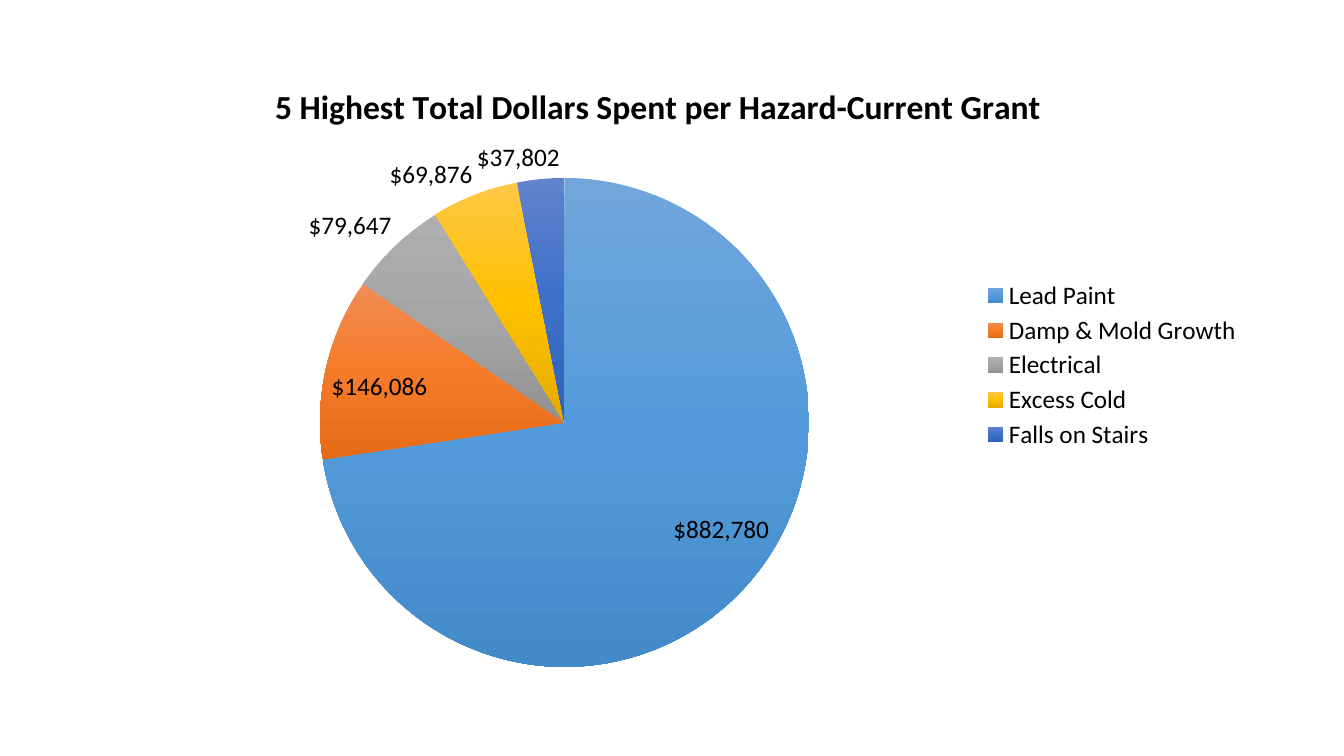
from copy import deepcopy
from dataclasses import dataclass

from lxml.etree import SubElement
from pptx import Presentation
from pptx.chart.data import CategoryChartData
from pptx.dml.color import RGBColor
from pptx.enum.chart import XL_CHART_TYPE as ChartType
from pptx.enum.chart import XL_LABEL_POSITION as LabelPosition
from pptx.enum.chart import XL_LEGEND_POSITION as LegendPosition
from pptx.oxml.ns import qn
from pptx.util import Emu, Pt

TITLE = "5 Highest Total Dollars Spent per Hazard-Current Grant"
# hazard, dollars, gradient from top to bottom
HAZARDS = [
    ("Lead Paint", 882780, ("71A6DB", "549BDB", "438AC9")),
    ("Damp & Mold Growth", 146086, ("F18C55", "F67B28", "E56B17")),
    ("Electrical", 79647, ("AFAFAF", "A5A5A5", "929292")),
    ("Excess Cold", 69876, ("FFC746", "FFC000", "E5AC00")),
    ("Falls on Stairs", 37802, ("6083CB", "3E70CA", "2E61BA")),
]

# left, top, width, height in px
SLIDE_SIZE = (1344, 756)
CHART_BOX = (51, 49, 1200, 632)
TITLE_BOX = (269, 78)
PIE_BOX = (320, 178, 489, 489)
LEGEND_BOX = (981, 276, 262, 178)
PX = 914400 / 100.8


@dataclass(frozen=True)
class Theme:
    font: str = "Calibri"
    text: str = "000000"
    title_size: int = 24
    label_size: int = 18


THEME = Theme()


def px(length):
    return Emu(round(length * PX))


def style_font(font, size, bold=False):
    font.name = THEME.font
    font.size = Pt(size)
    font.bold = bold
    font.color.rgb = RGBColor.from_string(THEME.text)


def place(part, index, box):
    """Fix a chart part at a slide position, its layout being child number index."""
    for old in part.findall(qn("c:layout")):
        part.remove(old)
    layout = SubElement(part, qn("c:layout"))
    part.insert(index, layout)
    manual = SubElement(layout, qn("c:manualLayout"))
    if index == 0:
        SubElement(manual, qn("c:layoutTarget")).set("val", "inner")
    for axis in "xy":
        SubElement(manual, qn(f"c:{axis}Mode")).set("val", "edge")
    left, top, width, height = CHART_BOX
    origin = (left, top, 0, 0)
    extent = (width, height, width, height)
    for key, length, start, full in zip("xywh", box, origin, extent):
        SubElement(manual, qn(f"c:{key}")).set("val", f"{(length - start) / full:.4f}")


def shade(point, colors):
    fill = point.format.fill
    fill.gradient()
    fill.gradient_angle = 270
    stops = point.format.fill._xPr.find(".//" + qn("a:gsLst"))
    stops.append(deepcopy(stops[-1]))
    for number, (stop, color) in enumerate(zip(fill.gradient_stops, colors)):
        stop.color.rgb = RGBColor.from_string(color)
        stop.position = number / (len(colors) - 1)
    point.format.line.fill.background()


def add_hazard_pie(slide):
    names, dollars, gradients = zip(*HAZARDS)
    data = CategoryChartData()
    data.categories = names
    data.add_series(TITLE, dollars)
    chart = slide.shapes.add_chart(ChartType.PIE, *map(px, CHART_BOX), data).chart
    style_font(chart.font, THEME.label_size)

    chart.has_title = True
    heading = chart.chart_title.text_frame
    heading.text = TITLE
    style_font(heading.paragraphs[0].runs[0].font, THEME.title_size, bold=True)
    place(chart.chart_title._element, 1, TITLE_BOX)

    chart.has_legend = True
    chart.legend.position = LegendPosition.RIGHT
    chart.legend.include_in_layout = False
    style_font(chart.legend.font, THEME.label_size)
    place(chart.legend._element, 1, LEGEND_BOX)

    pie = chart.plots[0]
    pie.vary_by_categories = True
    place(pie._element.getparent(), 0, PIE_BOX)
    for number, colors in enumerate(gradients):
        shade(pie.series[0].points[number], colors)

    labels = pie.series[0].data_labels
    labels.show_value = True
    labels.number_format = '"$"#,##0'
    labels.number_format_is_linked = False
    labels.position = LabelPosition.BEST_FIT
    style_font(labels.font, THEME.label_size)


def main():
    deck = Presentation()
    deck.slide_width, deck.slide_height = map(px, SLIDE_SIZE)
    add_hazard_pie(deck.slides.add_slide(deck.slide_layouts[6]))
    deck.save("out.pptx")


if __name__ == "__main__":
    main()
